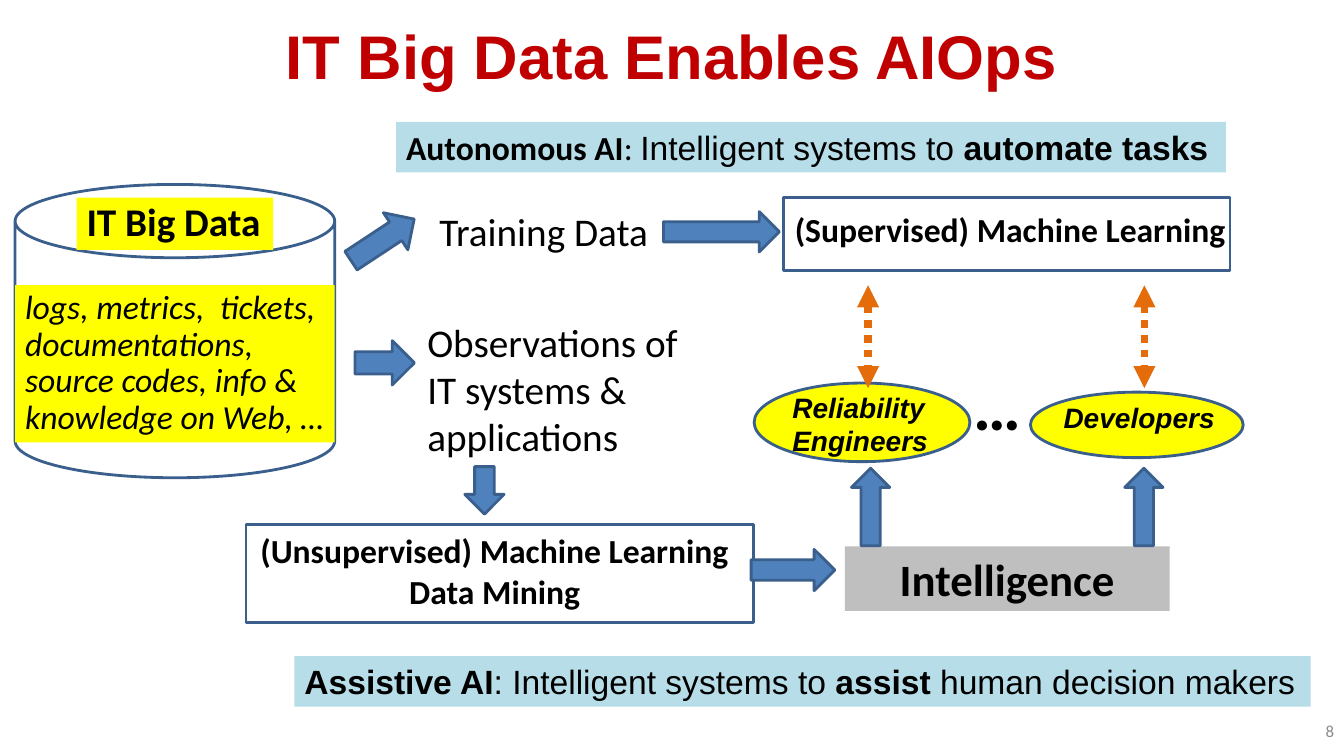
from dataclasses import dataclass
from typing import Optional

from lxml import etree
from pptx import Presentation
from pptx import util as u
from pptx.dml.color import RGBColor
from pptx.enum import dml, shapes, text
from pptx.oxml.ns import qn

COLORS = {
    "title": "C00000", "ink": "000000", "number": "8C8C8C", "white": "FFFFFF",
    "outline": "3A5F8C", "arrow": "4F81BD", "yellow": "FFFF00",
    "banner": "B7DEE8", "grey": "BFBFBF", "orange": "E46C0A",
}
CELL = 0.1  # side of a grid cell in inches; the slide is 133.3 by 75 cells
SHAPE, ALIGN = shapes.MSO_SHAPE, text.PP_ALIGN
Box = tuple[float, float, float, float]  # column, row, columns wide, rows high


@dataclass
class Run:
    text: str
    bold: bool = False
    font: str = "Calibri"


@dataclass
class Label:
    box: Box
    lines: list[list[Run]]
    size: float
    color: str = "ink"
    fill: Optional[str] = None
    align: ALIGN = ALIGN.LEFT
    italic: bool = False
    wrap: bool = False
    spacing: Optional[float] = None


@dataclass
class Block:
    box: Box
    kind: SHAPE = SHAPE.RECTANGLE
    fill: str = "white"
    rotation: float = 0


@dataclass
class Role:
    ellipse: Box
    label: Box
    names: list[str]
    link_col: float
    arrow_col: float


def grid(*cells: float) -> list[int]:
    return [u.Inches(c * CELL) for c in cells]


def rgb(name: str) -> RGBColor:
    return RGBColor.from_string(COLORS[name])


def style(font, size: float, color: str, name: str, bold: bool, italic: bool = False) -> None:
    font.size, font.name, font.bold, font.italic = u.Pt(size), name, bold, italic
    font.color.rgb = rgb(color)


def draw_label(s, label: Label) -> None:
    sp = s.shapes.add_textbox(*grid(*label.box))
    if label.fill:
        sp.fill.solid()
        sp.fill.fore_color.rgb = rgb(label.fill)
    tf = sp.text_frame
    tf.word_wrap = label.wrap
    tf.auto_size = text.MSO_AUTO_SIZE.SHAPE_TO_FIT_TEXT
    for i, line in enumerate(label.lines):
        p = tf.add_paragraph() if i else tf.paragraphs[0]
        p.alignment = label.align
        if label.spacing:
            p.line_spacing = u.Pt(label.spacing)
        for run in line:
            r = p.add_run()
            r.text = run.text
            style(r.font, label.size, label.color, run.font, run.bold, label.italic)


def draw_block(s, block: Block) -> None:
    sp = s.shapes.add_shape(block.kind, *grid(*block.box))
    sp.shadow.inherit = False
    sp.rotation = block.rotation
    sp.fill.solid()
    sp.fill.fore_color.rgb = rgb(block.fill)
    sp.line.color.rgb = rgb("outline")
    sp.line.width = u.Pt(2)


def draw_link(s, col: float, top: float, bottom: float) -> None:
    cn = s.shapes.add_connector(shapes.MSO_CONNECTOR.STRAIGHT, *grid(col, top, col, bottom))
    cn.line.color.rgb = rgb("orange")
    cn.line.width = u.Pt(5.25)
    cn.line.dash_style = dml.MSO_LINE.ROUND_DOT
    ln = cn.line._get_or_add_ln()
    ln.find(qn("a:prstDash")).set("val", "sysDot")
    for end in ("a:headEnd", "a:tailEnd"):
        etree.SubElement(ln, qn(end)).set("type", "triangle")
    etree.SubElement(cn._element.spPr, qn("a:effectLst"))


def draw_role(s, role: Role) -> None:
    draw_block(s, Block(role.ellipse, SHAPE.OVAL, "yellow"))
    lines = [[Run(name, True, "Arial")] for name in role.names]
    draw_label(s, Label(role.label, lines, 20, italic=True))
    draw_link(s, role.link_col, 28.3, 38.5)
    draw_block(s, arrow((role.arrow_col, 48.4, 7.7, 3.8), 270))


def arrow(box: Box, rotation: float = 0) -> Block:
    return Block(box, SHAPE.RIGHT_ARROW, "arrow", rotation)


FLOW = [
    # Data store
    Block((1.5, 18.3, 31.7, 29.1), SHAPE.CAN),
    Label((1.5, 28.3, 31.7, 15.6),
          [[Run("logs, metrics,  tickets, documentations, source codes, info & knowledge on Web, …")]],
          24, fill="yellow", italic=True, wrap=True, spacing=26),
    # Supervised path
    Label((42.6, 20.1, 24.5, 5.7), [[Run("Training Data")]], 28),
    arrow((34.2, 21.6, 7.5, 4.4), 326.6),
    arrow((65.8, 21, 11.5, 4)),
    Block((77.7, 19.6, 44.3, 7.2)),
    Label((75.7, 20.2, 49, 5), [[Run("(Supervised) Machine Learning", True)]], 24,
          align=ALIGN.CENTER, wrap=True),
    Label((39.3, 12.1, 82.3, 5),
          [[Run("Autonomous AI", True), Run(": "), Run("Intelligent systems to ", font="Arial"),
            Run("automate tasks", True, "Arial")]], 24, fill="banner"),
    # Unsupervised path
    arrow((35.2, 33.8, 5.9, 4.4)),
    Label((41.4, 31.1, 28.7, 15.1),
          [[Run("Observations of")], [Run("IT systems &")], [Run("applications")]], 28),
    arrow((45.7, 46.7, 4.7, 3.9), 90),
    Block((24.4, 52, 50.3, 9.8)),
    Label((24.6, 52.1, 48.9, 9.1),
          [[Run("(Unsupervised) Machine Learning", True)], [Run("Data Mining", True)]], 24,
          align=ALIGN.CENTER),
    arrow((74.5, 54.5, 8.3, 4.1)),
    Label((83.8, 54.2, 32.2, 6.4), [[Run("Intelligence", True)]], 32, fill="grey",
          align=ALIGN.CENTER, wrap=True),
    Label((29.2, 65.1, 100.8, 5),
          [[Run("Assistive AI", True, "Arial"), Run(": Intelligent systems to ", font="Arial"),
            Run("assist ", True, "Arial"), Run("human decision makers", font="Arial")]],
          24, fill="banner", wrap=True),
    # People served
    Role((74.8, 38, 21.4, 7.8), (77.6, 38.2, 16.7, 7.7), ["Reliability", "Engineers"], 86.1, 82.5),
    Role((102.2, 38.9, 21.1, 6.5), (104.5, 39.2, 18.3, 4.4), ["Developers"], 113.5, 109.6),
    Label((95.6, 35.6, 7.3, 9.1), [[Run("…", True)]], 48),
    # Data store name and slide number
    Label((7.6, 19.6, 19.5, 5.2), [[Run("IT Big Data", True)]], 28, fill="yellow", spacing=30),
    Label((102.2, 71, 31.1, 4), [[Run("8")]], 12, "number", align=ALIGN.RIGHT, wrap=True),
]
DRAW = {Label: draw_label, Block: draw_block, Role: draw_role}


def main() -> None:
    prs = Presentation()
    prs.slide_width, prs.slide_height = grid(133.3, 75)
    s = prs.slides.add_slide(prs.slide_layouts[5])

    # Title
    title = s.shapes.title
    title.left, title.top, title.width, title.height = grid(0, 0, 133.3, 10.8)
    tf = title.text_frame
    tf.text = "IT Big Data Enables AIOps"
    tf.vertical_anchor = text.MSO_ANCHOR.MIDDLE
    p = tf.paragraphs[0]
    p.alignment = ALIGN.CENTER
    style(p.runs[0].font, 44, "title", "Arial", True)

    # Diagram, from back to front
    for item in FLOW:
        DRAW[type(item)](s, item)
    prs.save("out.pptx")


if __name__ == "__main__":
    main()
